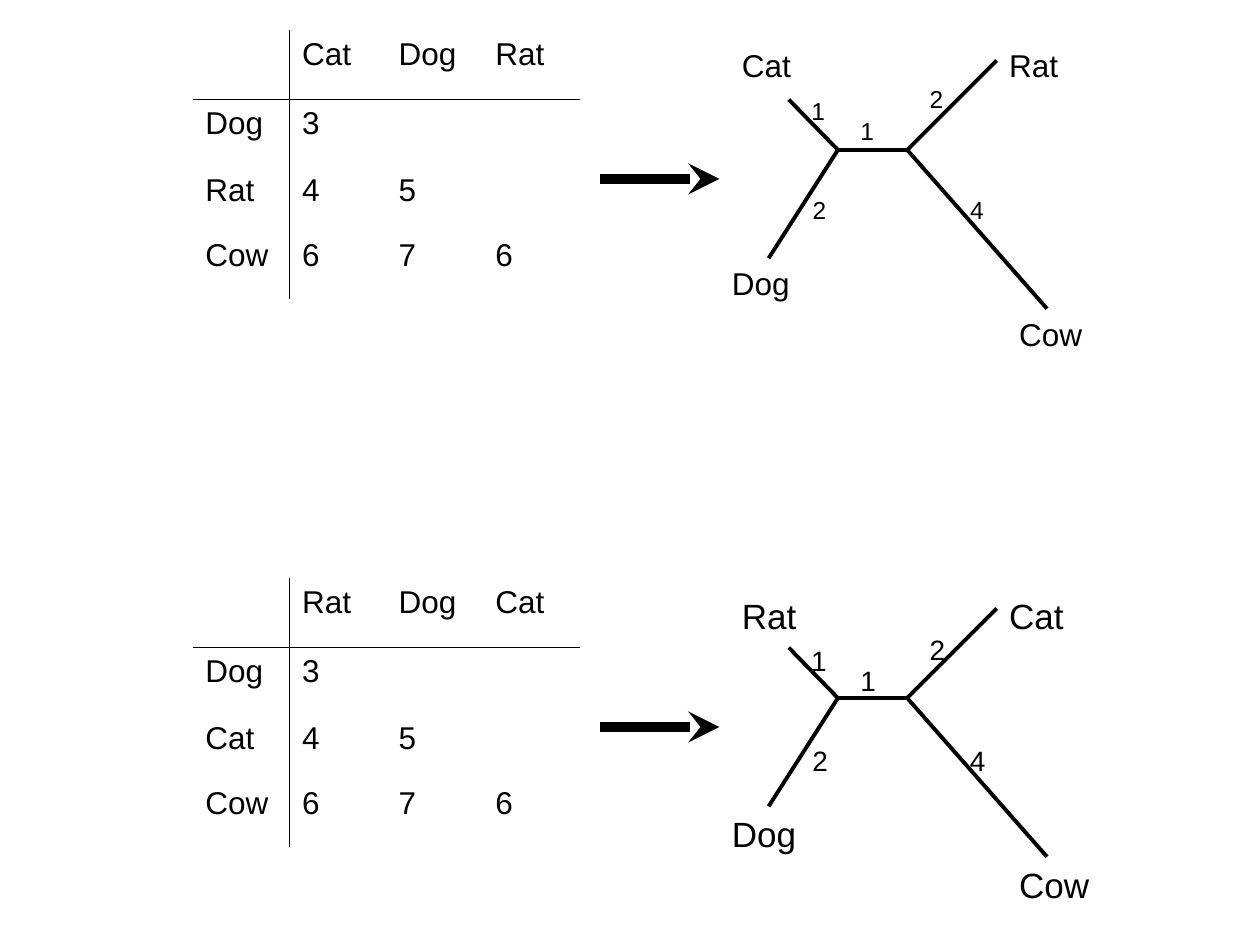
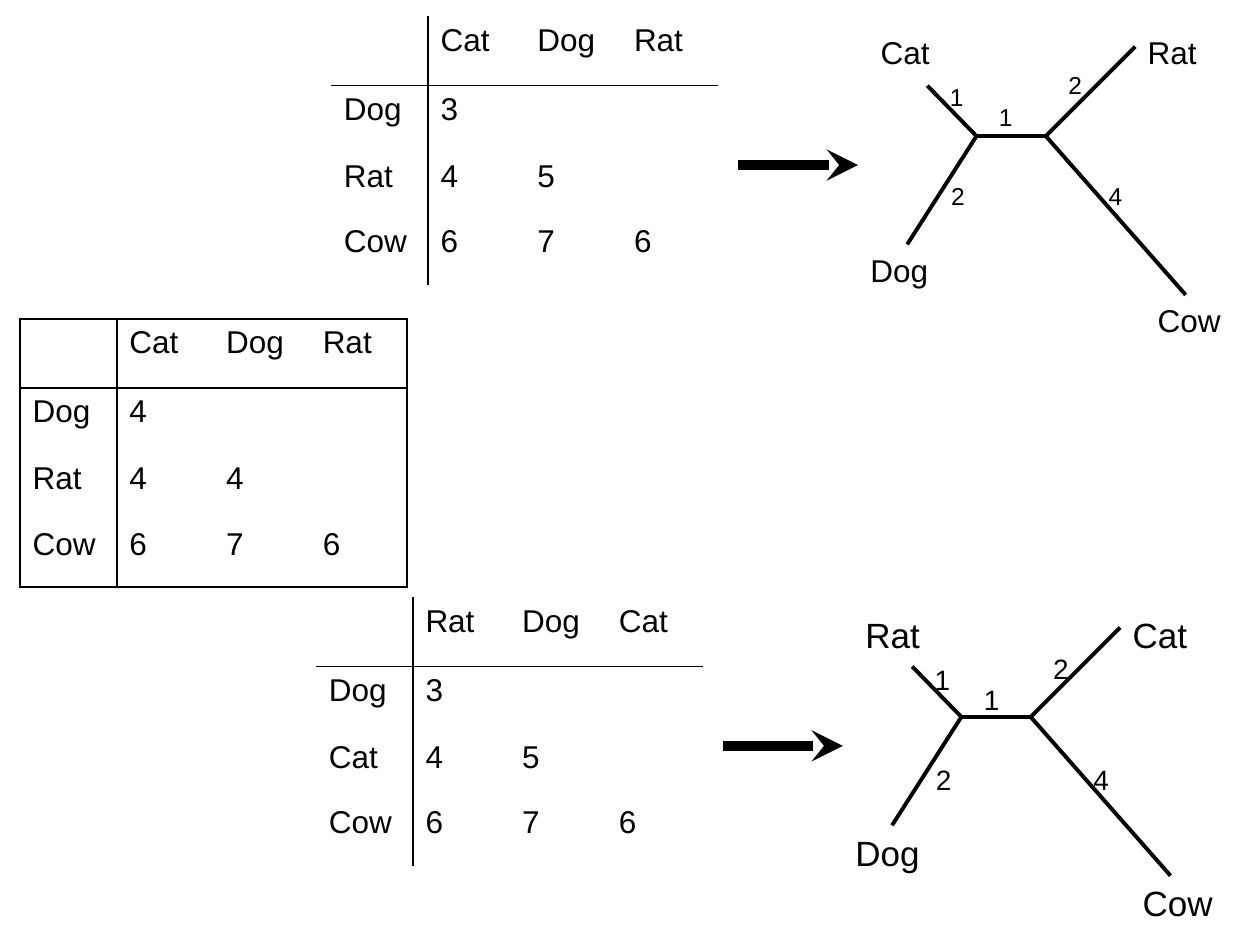
from dataclasses import dataclass
from typing import NamedTuple

from lxml.etree import SubElement
from pptx import Presentation
from pptx.dml.color import RGBColor
from pptx.enum.shapes import MSO_CONNECTOR as Connector
from pptx.enum.text import MSO_AUTO_SIZE as AutoSize
from pptx.oxml.ns import qn
from pptx.shapes.group import GroupShape
from pptx.slide import Slide
from pptx.table import _Cell as Cell
from pptx.text.text import _Paragraph as Paragraph
from pptx.util import Inches, Pt

BLACK = RGBColor(0x00, 0x00, 0x00)
FONT = "Arial"
TABLE_WIDTH = 3.07
ROW_HEIGHTS = (0.55, 0.53, 0.52, 0.53)
TABLE_SIZE = 18
BRANCH_WEIGHT, ARROW_WEIGHT = 2.25, 6
EM_WIDTHS = {"Cat": 1.56, "Rat": 1.56, "Dog": 1.84, "Cow": 2.05}
DIGIT_EM_WIDTH = 0.56


class Point(NamedTuple):
    x: float
    y: float


# All tree places are measured from the top left corner of the matrix beside it.
ARROW = (Point(3.23, 1.18), Point(4.18, 1.18))
LEFT_NODE, RIGHT_NODE = Point(5.12, 0.95), Point(5.67, 0.95)
BRANCHES = (
    (Point(4.73, 0.55), LEFT_NODE),
    (LEFT_NODE, Point(4.57, 1.81)),
    (RIGHT_NODE, Point(6.78, 2.21)),
    (LEFT_NODE, RIGHT_NODE),
    (RIGHT_NODE, Point(6.38, 0.24)),
)
LEAF_PLACES = (Point(4.26, 0.08), Point(4.18, 1.81), Point(6.38, 0.08), Point(6.46, 2.21))
BRANCH_LENGTHS = (
    ("1", Point(4.81, 0.47)),
    ("1", Point(5.20, 0.63)),
    ("2", Point(5.75, 0.38)),
    ("2", Point(4.82, 1.26)),
    ("4", Point(6.07, 1.26)),
)


@dataclass(frozen=True)
class Matrix:
    corner: Point
    first: str
    third: str
    distances: tuple[str, ...] = ("3", "45", "676")
    boxed: bool = False

    def rows(self) -> list[list[str]]:
        """Header row, then the lower triangle of distances."""
        names = ("Dog", self.third, "Cow")
        body = [[name, *digits] for name, digits in zip(names, self.distances)]
        return [["", self.first, "Dog", self.third], *body]


@dataclass(frozen=True)
class Tree:
    matrix: Matrix
    leaf_size: int
    length_size: int


def write(para: Paragraph, text: str, size: float) -> None:
    span = para.add_run()
    span.text = text
    for name, value in {"name": FONT, "size": Pt(size)}.items():
        setattr(span.font, name, value)
    span.font.color.rgb = BLACK


def set_borders(cell: Cell, visible: dict[str, bool]) -> None:
    """Rule the given sides (L, R, T, B) and clear the others."""
    properties = cell._tc.get_or_add_tcPr()
    for side, shown in visible.items():
        line = SubElement(properties, qn(f"a:ln{side}"), w=str(Pt(1)))
        if shown:
            fill = SubElement(line, qn("a:solidFill"))
            SubElement(fill, qn("a:srgbClr"), val=str(BLACK))
        else:
            SubElement(line, qn("a:noFill"))


def draw_matrix(page: Slide, matrix: Matrix) -> None:
    rows = matrix.rows()
    count = len(rows)
    table = page.shapes.add_table(
        count, count, Inches(matrix.corner.x), Inches(matrix.corner.y),
        Inches(TABLE_WIDTH), Inches(sum(ROW_HEIGHTS)),
    ).table
    table.first_row = table.horz_banding = False
    for row, height in zip(table.rows, ROW_HEIGHTS):
        row.height = Inches(height)

    # The header edge is always ruled; the outer edges only when boxed.
    ruled = {1, 0, count} if matrix.boxed else {1}
    for r in range(count):
        for c in range(count):
            cell = table.cell(r, c)
            set_borders(cell, {"L": c in ruled, "R": c + 1 in ruled,
                               "T": r in ruled, "B": r + 1 in ruled})
            cell.fill.background()
            if c < len(rows[r]) and rows[r][c]:
                write(cell.text_frame.paragraphs[0], rows[r][c], TABLE_SIZE)


def draw_line(group: GroupShape, corner: Point, start: Point, end: Point,
              weight: float, arrow: bool = False) -> None:
    line = group.shapes.add_connector(
        Connector.STRAIGHT,
        Inches(corner.x + start.x), Inches(corner.y + start.y),
        Inches(corner.x + end.x), Inches(corner.y + end.y),
    )
    line.line.color.rgb = BLACK
    line.line.width = Pt(weight)
    if arrow:
        SubElement(line.line._get_or_add_ln(), qn("a:tailEnd"), type="stealth")
    SubElement(line._element.spPr, qn("a:effectLst"))


def draw_label(group: GroupShape, corner: Point, place: Point, text: str, size: int) -> None:
    """Draw a one-line box sized to its text plus the default insets."""
    width = 0.2 + EM_WIDTHS.get(text, DIGIT_EM_WIDTH) * size / 72
    height = 0.1 + 1.2 * size / 72
    box = group.shapes.add_textbox(
        Inches(corner.x + place.x), Inches(corner.y + place.y), Inches(width), Inches(height)
    )
    frame = box.text_frame
    for name, value in {"word_wrap": False, "auto_size": AutoSize.SHAPE_TO_FIT_TEXT}.items():
        setattr(frame, name, value)
    write(frame.paragraphs[0], text, size)


def draw_tree(page: Slide, tree: Tree) -> None:
    """Draw the matrix, the arrow and the tree that fits it."""
    matrix = tree.matrix
    corner = matrix.corner
    draw_matrix(page, matrix)
    group = page.shapes.add_group_shape()
    draw_line(group, corner, *ARROW, ARROW_WEIGHT, arrow=True)
    for start, end in BRANCHES:
        draw_line(group, corner, start, end, BRANCH_WEIGHT)
    leaves = (matrix.first, "Dog", matrix.third, "Cow")
    for leaf, place in zip(leaves, LEAF_PLACES):
        draw_label(group, corner, place, leaf, tree.leaf_size)
    for length, place in BRANCH_LENGTHS:
        draw_label(group, corner, place, length, tree.length_size)


def add_tree_page(deck: Presentation, upper: Point, lower: Point) -> Slide:
    page = deck.slides.add_slide(deck.slide_layouts[6])
    draw_tree(page, Tree(Matrix(upper, "Cat", "Rat"), 18, 14))
    draw_tree(page, Tree(Matrix(lower, "Rat", "Cat"), 20, 16))
    return page


def main() -> None:
    deck = Presentation()
    deck.slide_width, deck.slide_height = Inches(10), Inches(7.5)
    add_tree_page(deck, Point(1.53, 0.24), Point(1.53, 4.59))
    page = add_tree_page(deck, Point(2.63, 0.13), Point(2.51, 4.74))
    draw_matrix(page, Matrix(Point(0.16, 2.53), "Cat", "Rat", ("4", "44", "676"), boxed=True))
    deck.save("out.pptx")


if __name__ == "__main__":
    main()
